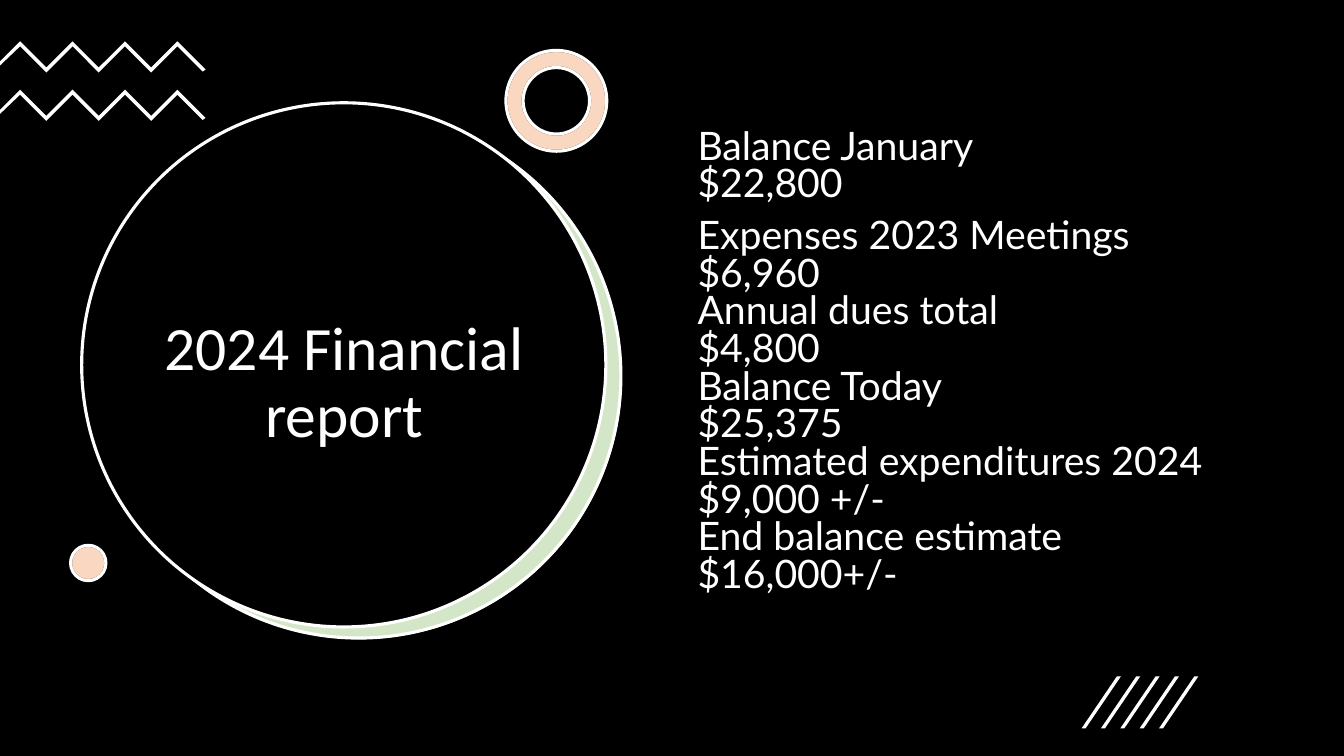
"""Build the 2024 financial report slide."""
from dataclasses import dataclass
from typing import Optional

from lxml.etree import SubElement
from pptx import Presentation
from pptx.dml.color import RGBColor
from pptx.enum.shapes import MSO_SHAPE
from pptx.enum.text import MSO_ANCHOR, MSO_AUTO_SIZE, PP_ALIGN
from pptx.oxml.ns import qn
from pptx.util import Emu, Inches, Pt

WIDTH, HEIGHT = Inches(13.333), Inches(7.5)
COLORS = {"black": "000000", "white": "FFFFFF", "green": "70AD47", "orange": "ED7D31"}
TITLE = "2024 Financial report"
BALANCES = [
    ["Balance January", "$22,800"],
    ["Expenses 2023 Meetings", "$6,960", "Annual dues total", "$4,800",
     "Balance Today", "$25,375", "Estimated expenditures 2024", "$9,000 +/-",
     "End balance estimate", "$16,000+/-"],
]
TITLE_FORMAT = {"name": "Calibri", "size": Pt(44)}
BODY_FORMAT = {"name": "Lato", "size": Pt(28)}
TITLE_PARAGRAPH = {"alignment": PP_ALIGN.CENTER, "line_spacing": 0.9}
BODY_PARAGRAPH = {"alignment": PP_ALIGN.LEFT, "line_spacing": 0.8, "space_before": Pt(10)}


@dataclass(frozen=True)
class Round:
    """A round shape, with its size as a percentage of the slide width."""
    left: float
    top: float
    size: float
    fill: str
    line: Optional[str] = None
    alpha: int = 100
    kind: MSO_SHAPE = MSO_SHAPE.OVAL


BIG_CIRCLES = [
    Round(7.28, 15.2, 39, "white"),
    Round(7.2, 15.07, 39, "green", "white", 30),
    Round(6.08, 13.6, 39, "black", "white"),
]
SMALL_ROUNDS = [
    Round(left, top, size, fill, line, alpha, kind)
    for left, top, size, kind in [(37.65, 6.67, 7.5, MSO_SHAPE.DONUT),
                                  (5.25, 72.13, 2.63, MSO_SHAPE.OVAL)]
    for fill, line, alpha in [("white", "black", 100), ("orange", "white", 30)]
]


def across(percent: float) -> Emu:
    return Emu(round(WIDTH * percent / 100))


def down(percent: float) -> Emu:
    return Emu(round(HEIGHT * percent / 100))


def paint(shape, fill: str, line: Optional[str] = None, alpha: int = 100) -> None:
    shape.shadow.inherit = False
    shape.fill.solid()
    shape.fill.fore_color.rgb = RGBColor.from_string(COLORS[fill])
    if alpha < 100:
        color = shape.element.spPr.find(qn("a:solidFill")).find(qn("a:srgbClr"))
        SubElement(color, qn("a:alpha")).set("val", str(alpha * 1000))
    if line:
        shape.line.color.rgb = RGBColor.from_string(COLORS[line])
        shape.line.width = Pt(2.25)
    else:
        shape.line.fill.background()


def draw_rounds(shapes, rounds: list[Round]) -> None:
    for item in rounds:
        size = across(item.size)
        shape = shapes.add_shape(item.kind, across(item.left), down(item.top), size, size)
        if item.kind == MSO_SHAPE.DONUT:
            shape.adjustments[0] = 0.17
        paint(shape, item.fill, item.line, item.alpha)


def draw_outline(shapes, top: float, points: list[tuple[float, float]]) -> None:
    corners = [(across(x), down(top) + across(y)) for x, y in points]
    builder = shapes.build_freeform(*corners[0], scale=1.0)
    builder.add_line_segments(corners[1:])
    paint(builder.convert_to_shape(), "white")


def draw_zigzags(shapes) -> None:
    step, thickness = 1.95, 0.37
    upper = [(1.5 + step * turn, step * (turn % 2)) for turn in range(7)]
    lower = [(x, y + thickness) for x, y in reversed(upper)]
    points = upper + [(15.3, 2.1), (15.08, 2.25)] + lower + [(0, 1.8), (0, 1.5)]
    group = shapes.add_group_shape()
    for top in (5.47, 11.87):
        draw_outline(group.shapes, top, points)


def draw_slashes(shapes) -> None:
    slant, thickness, height = 2.62, 0.3, 3.86
    group = shapes.add_group_shape()
    for number in range(5):
        left = 80.48 + 1.44 * number
        draw_outline(group.shapes, 89.47, [
            (left + thickness, height), (left, height),
            (left + slant, 0), (left + slant + thickness, 0)])


def fill_placeholder(placeholder, box: tuple, texts: list[str], anchor: MSO_ANCHOR,
                     paragraph_format: dict, font_format: dict) -> None:
    left, top, width, height = box
    bounds = {"left": across(left), "top": down(top),
              "width": across(width), "height": down(height)}
    for name, value in bounds.items():
        setattr(placeholder, name, value)
    frame = placeholder.text_frame
    for name, value in {"word_wrap": True, "auto_size": MSO_AUTO_SIZE.NONE,
                        "vertical_anchor": anchor}.items():
        setattr(frame, name, value)
    list_style = next(placeholder.element.iter(qn("a:lstStyle")))
    level = SubElement(list_style, qn("a:lvl1pPr"), marL="0", indent="0")
    SubElement(level, qn("a:buNone"))
    SubElement(level, qn("a:defRPr"), sz=str(round(font_format["size"].pt * 100)))
    for index, text in enumerate(texts):
        paragraph = frame.add_paragraph() if index else frame.paragraphs[0]
        paragraph.text = text
        for name, value in paragraph_format.items():
            setattr(paragraph, name, value)
        for run in paragraph.runs:
            for name, value in font_format.items():
                setattr(run.font, name, value)
            run.font.color.rgb = RGBColor.from_string(COLORS["white"])
    placeholder.element.getparent().append(placeholder.element)


def main() -> None:
    presentation = Presentation()
    presentation.slide_width, presentation.slide_height = WIDTH, HEIGHT
    slide = presentation.slides.add_slide(presentation.slide_layouts[1])
    shapes = slide.shapes
    title, body = shapes.title, slide.placeholders[1]
    paint(shapes.add_shape(MSO_SHAPE.RECTANGLE, 0, 0, WIDTH, HEIGHT), "black")
    draw_rounds(shapes, BIG_CIRCLES)
    fill_placeholder(title, (9.08, 27.33, 33.08, 46.93), [TITLE],
                     MSO_ANCHOR.MIDDLE, TITLE_PARAGRAPH, TITLE_FORMAT)
    draw_zigzags(shapes)
    draw_rounds(shapes, SMALL_ROUNDS)
    fill_placeholder(body, (51.15, 16.53, 42.83, 63.47),
                     ["\n".join(lines) for lines in BALANCES],
                     MSO_ANCHOR.TOP, BODY_PARAGRAPH, BODY_FORMAT)
    draw_slashes(shapes)
    presentation.save("out.pptx")


if __name__ == "__main__":
    main()
